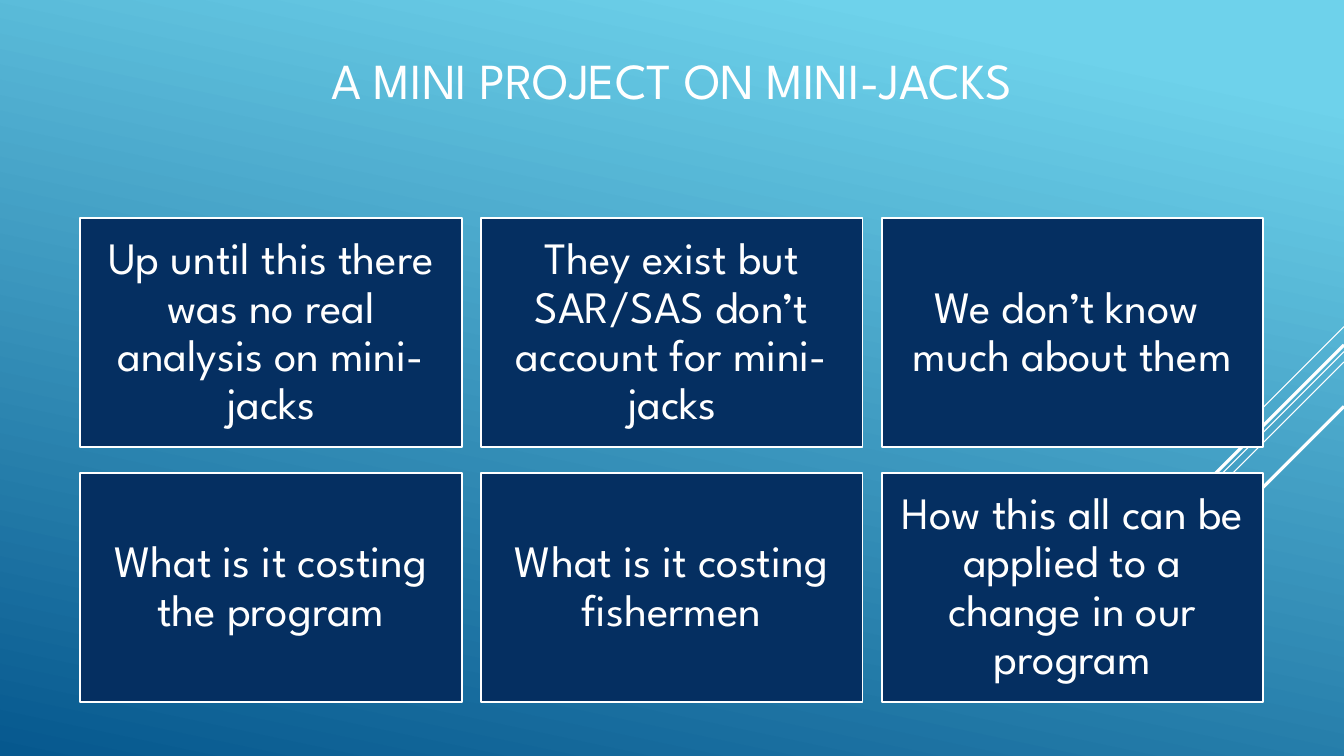
from lxml import etree
from pptx import Presentation
from pptx.dml.color import RGBColor
from pptx.enum import shapes, text
from pptx.oxml.ns import qn
from pptx.util import Cm, Pt

WHITE = RGBColor(0xFF, 0xFF, 0xFF)
NAVY = RGBColor(0x05, 0x2F, 0x61)
SKY = RGBColor(0x6E, 0xD2, 0xEB)
OCEAN = RGBColor(0x06, 0x58, 0x8E)
FONT = "League Spartan"
WIDTH, HEIGHT = 33.87, 19.05


def write_centred(frame, words, size):
    frame.word_wrap = True
    frame.vertical_anchor = text.MSO_ANCHOR.MIDDLE
    paragraph = frame.paragraphs[0]
    paragraph.text = words
    paragraph.alignment = text.PP_ALIGN.CENTER
    paragraph.line_spacing = 0.9
    paragraph.font.name = FONT
    paragraph.font.size = Pt(size)
    paragraph.font.color.rgb = WHITE


deck = Presentation()
deck.slide_width, deck.slide_height = Cm(WIDTH), Cm(HEIGHT)
slide = deck.slides.add_slide(deck.slide_layouts[6])

sky = slide.background.fill
sky.gradient()
sky.gradient_angle = 360 - 102  # python-pptx counts counter-clockwise
for stop, color, position in zip(sky.gradient_stops, (SKY, OCEAN), (0.1, 1)):
    stop.color.rgb = color
    stop.position = position

# Diagonal rays from the right edge: start height, reach in both directions, weight
rays = [
    (8.23, 2.54, 0.75),
    (8.86, 8.28, 0.75),
    (9.12, 5.26, 0.75),
    (8.69, 4.85, 2.25),
    (10.24, 3.53, 2.25),
]
for start, reach, weight in rays:
    ray = slide.shapes.add_connector(
        shapes.MSO_CONNECTOR.STRAIGHT,
        Cm(WIDTH), Cm(start), Cm(WIDTH - reach), Cm(start + reach))
    ray.line.color.rgb = WHITE
    ray.line.width = Pt(weight)
    etree.SubElement(ray._element.spPr, qn("a:effectLst"))

title = slide.shapes.add_textbox(Cm(5.08), Cm(0), Cm(23.7), Cm(4.19))
write_centred(title.text_frame, "A MINI PROJECT ON MINI-JACKS", 36)

points = [
    "Up until this there was no real analysis on mini-jacks",
    "They exist but SAR/SAS don’t account for mini-jacks",
    "We don’t know  much about them",
    "What is it costing the program",
    "What is it costing fishermen",
    "How this all can be applied to a change in our program",
]
COLUMNS = 3
for index, point in enumerate(points):
    row, column = divmod(index, COLUMNS)
    card = slide.shapes.add_shape(
        shapes.MSO_SHAPE.RECTANGLE,
        Cm(2.02 + 10.1 * column), Cm(5.5 + 6.42 * row), Cm(9.62), Cm(5.77))
    card.shadow.inherit = False
    card.fill.solid()
    card.fill.fore_color.rgb = NAVY
    card.line.color.rgb = WHITE
    card.line.width = Pt(1.25)
    frame = card.text_frame
    frame.margin_left = frame.margin_right = Cm(0.33)
    frame.margin_top = frame.margin_bottom = Cm(0.33)
    write_centred(frame, point, 32)

deck.save("out.pptx")
